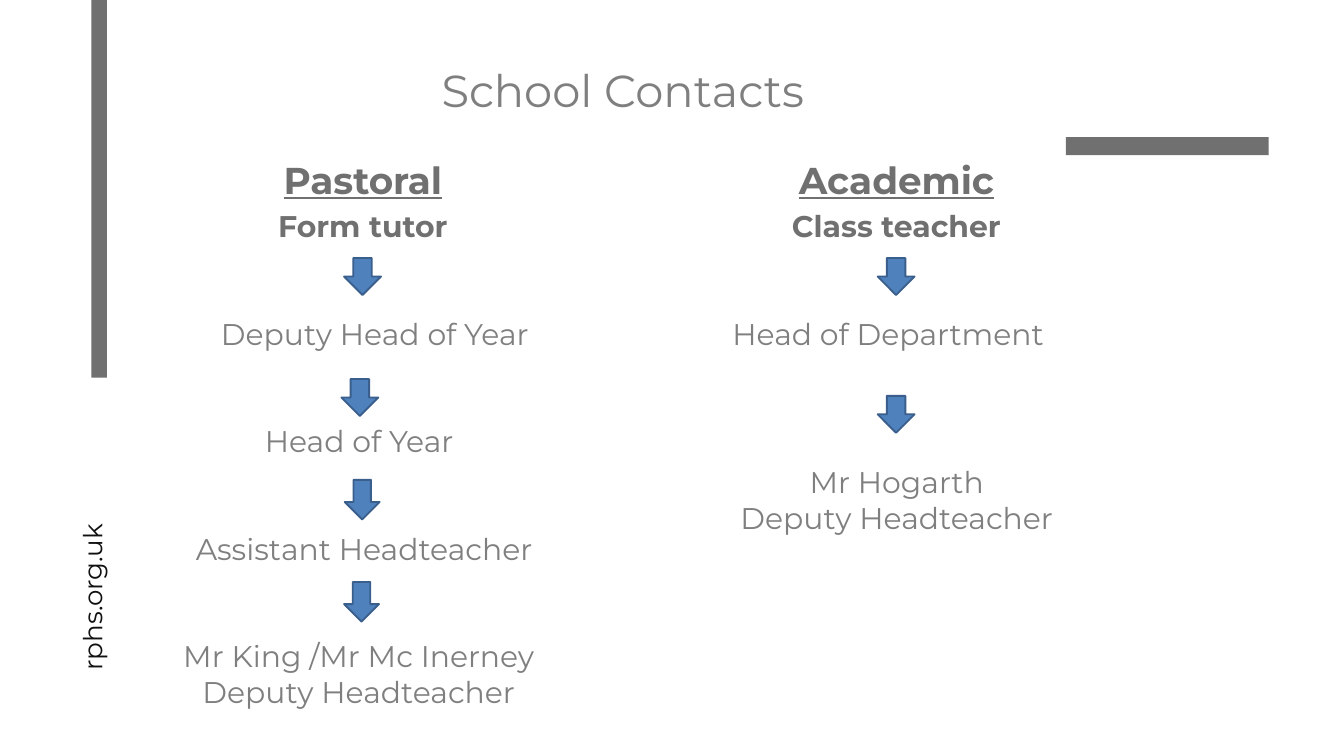
"""Build the School Contacts slide with its pastoral and academic chains."""
from dataclasses import dataclass

from lxml import etree
from pptx import Presentation
from pptx import util as u
from pptx.dml.color import RGBColor
from pptx.enum import shapes, text
from pptx.oxml import ns

DARK_GREY = RGBColor(0x70, 0x70, 0x70)
MID_GREY = RGBColor(0x7F, 0x7F, 0x7F)
NEAR_BLACK = RGBColor(0x10, 0x10, 0x10)
BLUE = RGBColor(0x4F, 0x81, 0xBD)
DARK_BLUE = RGBColor(0x3A, 0x5F, 0x8C)
LEFT, CENTER = text.PP_ALIGN.LEFT, text.PP_ALIGN.CENTER
GROW = {"word_wrap": False, "auto_size": text.MSO_AUTO_SIZE.SHAPE_TO_FIT_TEXT}
FIXED = {"word_wrap": True, "auto_size": text.MSO_AUTO_SIZE.NONE}
TOP = {"vertical_anchor": text.MSO_ANCHOR.TOP}
NO_INSETS = dict.fromkeys(("margin_left", "margin_top", "margin_right", "margin_bottom"), 0)


@dataclass(frozen=True)
class Area:
    left: float
    top: float
    width: float
    height: float

    def lengths(self) -> tuple:
        return tuple(u.Inches(v) for v in (self.left, self.top, self.width, self.height))


@dataclass(frozen=True)
class Contact:
    lines: tuple[str, ...]
    area: Area
    align: text.PP_ALIGN = CENTER


@dataclass(frozen=True)
class Chain:
    heading: str
    first_contact: str
    heading_left: float
    contacts: tuple[Contact, ...]
    arrows: tuple[Area, ...]


CHAINS = (
    Chain("Pastoral", "Form tutor", 3.19, (
        Contact(("Deputy Head of Year",), Area(3.19, 4.65, 5.08, 0.64), LEFT),
        Contact(("Head of Year",), Area(3.74, 6.24, 3.21, 0.64)),
        Contact(("Assistant Headteacher",), Area(2.65, 7.84, 5.54, 0.64)),
        Contact(("Mr King /Mr Mc Inerney", "Deputy Headteacher"), Area(2.49, 9.44, 5.7, 1.18)),
    ), (
        Area(5.12, 3.84, 0.55, 0.55),
        Area(5.08, 5.64, 0.55, 0.55),
        Area(5.13, 7.14, 0.52, 0.59),
        Area(5.12, 8.66, 0.52, 0.59),
    )),
    Chain("Academic", "Class teacher", 11.13, (
        Contact(("Head of Department",), Area(10.8, 4.65, 5.05, 0.64), LEFT),
        Contact(("Mr Hogarth", "Deputy Headteacher"), Area(10.79, 6.85, 5.11, 1.18)),
    ), (
        Area(13.06, 3.84, 0.55, 0.55),
        Area(13.06, 5.89, 0.55, 0.55),
    )),
)
BARS = (Area(1.36, 0, 0.23, 5.62), Area(15.86, 2.04, 3.02, 0.27))


def set_values(target, values: dict) -> None:
    for key, value in values.items():
        setattr(target, key, value)


def place(shape, area: Area) -> None:
    set_values(shape, dict(zip(("left", "top", "width", "height"), area.lengths())))


def write(frame, lines: tuple[str, ...], size: float, color: RGBColor,
          align: text.PP_ALIGN) -> None:
    for index, line in enumerate(lines):
        paragraph = frame.add_paragraph() if index else frame.paragraphs[0]
        paragraph.text = line
        paragraph.alignment = align
        set_values(paragraph.runs[0].font, {"name": "Montserrat", "size": u.Pt(size)})
        paragraph.runs[0].font.color.rgb = color


def draw_shape(slide, preset: shapes.MSO_SHAPE, area: Area, fill: RGBColor):
    shape = slide.shapes.add_shape(preset, *area.lengths())
    shape.shadow.inherit = False
    shape.fill.solid()
    shape.fill.fore_color.rgb = fill
    return shape


def draw_bar(slide, area: Area) -> None:
    draw_shape(slide, shapes.MSO_SHAPE.RECTANGLE, area, DARK_GREY).line.fill.background()


def draw_arrow(slide, area: Area) -> None:
    arrow = draw_shape(slide, shapes.MSO_SHAPE.DOWN_ARROW, area, BLUE)
    arrow.line.color.rgb = DARK_BLUE
    arrow.line.width = u.Pt(2)


def draw_contact(slide, contact: Contact) -> None:
    frame = slide.shapes.add_textbox(*contact.area.lengths()).text_frame
    set_values(frame, GROW)
    write(frame, contact.lines, 32, MID_GREY, contact.align)


def fill_heading(body, chain: Chain) -> None:
    place(body, Area(chain.heading_left, 2.29, 4.42, 0.59))
    frame = body.text_frame
    set_values(frame, FIXED | TOP)
    write(frame, (chain.heading, chain.first_contact), 32, DARK_GREY, CENTER)
    formats = ({"size": u.Pt(40), "underline": True}, {"underline": False})
    for paragraph, values, space in zip(frame.paragraphs, formats, (0, 6.4)):
        paragraph.space_before = u.Pt(space)
        properties = paragraph._p.get_or_add_pPr()
        properties.set("marL", "0")
        properties.set("indent", "0")
        etree.SubElement(properties, ns.qn("a:buNone"))
        set_values(paragraph.runs[0].font, {"bold": True} | values)


def draw_website(slide) -> None:
    website = slide.shapes.add_textbox(*Area(-0.85, 7.53, 4.35, 0.54).lengths())
    website.rotation = 270
    frame = website.text_frame
    set_values(frame, GROW | {"word_wrap": True} | NO_INSETS)
    write(frame, ("rphs.org.uk",), 28, NEAR_BLACK, LEFT)
    frame.paragraphs[0].line_spacing = u.Pt(39.2)


def main() -> None:
    deck = Presentation()
    set_values(deck, {"slide_width": u.Inches(20), "slide_height": u.Inches(11.25)})
    slide = deck.slides.add_slide(deck.slide_layouts.get_by_name("Two Content"))
    title, *bodies = list(slide.placeholders)
    for bar in BARS:
        draw_bar(slide, bar)
    draw_website(slide)
    place(title, Area(6.47, 0.89, 5.93, 0.91))
    set_values(title.text_frame, GROW | TOP)
    write(title.text_frame, ("School Contacts",), 48, MID_GREY, LEFT)
    for body, chain in zip(bodies, CHAINS):
        fill_heading(body, chain)
        for contact in chain.contacts:
            draw_contact(slide, contact)
        for arrow in chain.arrows:
            draw_arrow(slide, arrow)
    deck.save("out.pptx")


if __name__ == "__main__":
    main()
